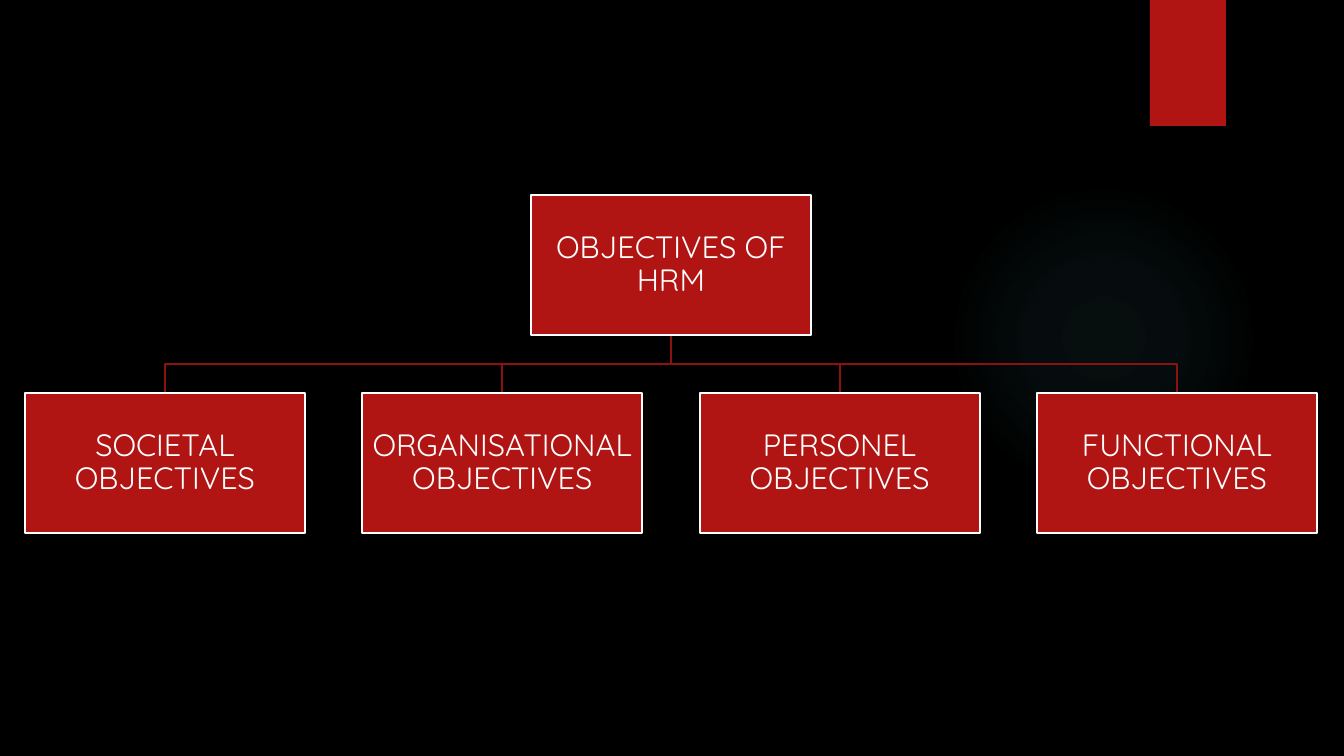
from lxml import etree
from pptx import Presentation
from pptx.dml.color import RGBColor
from pptx.enum.shapes import MSO_SHAPE
from pptx.enum.text import MSO_ANCHOR, PP_ALIGN
from pptx.oxml.ns import qn
from pptx.util import Pt

PX = 12700 * 5 / 7  # EMU in one px
RECT, OVAL = MSO_SHAPE.RECTANGLE, MSO_SHAPE.OVAL
MIDDLE, CENTER = MSO_ANCHOR.MIDDLE, PP_ALIGN.CENTER
BLACK = RGBColor(0, 0, 0)
WHITE = RGBColor(255, 255, 255)
RED = RGBColor(0xB0, 0x15, 0x13)
DARK = RGBColor(0x8D, 0x11, 0x0F)
TEAL = RGBColor(0x50, 0xB9, 0xC1)
GLOW = ((0, 7), (36, 6), (69, 0))  # position and opacity, in percent
CARD_W, CARD_H = 280, 140
ROOT = "OBJECTIVES OF HRM"
GOALS = ("SOCIETAL OBJECTIVES", "ORGANISATIONAL OBJECTIVES",
         "PERSONEL OBJECTIVES", "FUNCTIONAL OBJECTIVES")


def emu(px):
    return round(px * PX)


def add_block(slide, kind, box):
    """Add a plain red shape without line or shadow."""
    shape = slide.shapes.add_shape(kind, *map(emu, box))
    shape.shadow.inherit = False
    shape.fill.solid()
    shape.fill.fore_color.rgb = RED
    shape.line.fill.background()
    return shape


def add_glow(slide, box):
    """Add a circle whose colour fades out from its centre."""
    glow = add_block(slide, OVAL, box)
    fill = glow.fill
    fill.gradient()
    grad = glow._element.spPr.find(qn("a:gradFill"))
    for part in list(grad):
        grad.remove(part)
    stops = etree.SubElement(grad, qn("a:gsLst"))
    for pos, alpha in GLOW:
        stop = etree.SubElement(stops, qn("a:gs"), pos=str(pos * 1000))
        tint = etree.SubElement(stop, qn("a:srgbClr"), val=str(TEAL))
        etree.SubElement(tint, qn("a:alpha"), val=str(alpha * 1000))
    fade = etree.SubElement(grad, qn("a:path"), path="circle")
    etree.SubElement(fade, qn("a:fillToRect"),
                     {side: "50000" for side in "ltrb"})


def add_card(slide, left, top, text):
    card = add_block(slide, RECT, (left, top, CARD_W, CARD_H))
    card.line.color.rgb = WHITE
    card.line.width = Pt(1.5)
    frame = card.text_frame
    form = {"word_wrap": True, "vertical_anchor": MIDDLE}
    form.update({f"margin_{side}": emu(2)
                 for side in ("left", "top", "right", "bottom")})
    for name, value in form.items():
        setattr(frame, name, value)
    para = frame.paragraphs[0]
    para.alignment = CENTER
    para.line_spacing = 0.9
    run = para.add_run()
    run.text = text
    for name, value in {"name": "Quicksand", "size": Pt(22)}.items():
        setattr(run.font, name, value)
    run.font.color.rgb = WHITE


def add_branch(slide, start, end):
    """Draw a line that goes down, across and down again."""
    (x1, y1), (x2, y2) = start, end
    mid = (y1 + y2) / 2
    pen = slide.shapes.build_freeform(x1, y1, scale=PX)
    pen.add_line_segments([(x1, mid), (x2, mid), end], close=False)
    branch = pen.convert_to_shape()
    branch.shadow.inherit = False
    branch.fill.background()
    branch.line.color.rgb = DARK
    branch.line.width = Pt(1.5)


def add_tree(slide, box):
    """Place the root at the top centre and the goals along the bottom."""
    left, top, width, height = box
    mid = left + width / 2
    row = top + height - CARD_H
    step = (width - CARD_W) / (len(GOALS) - 1)
    spots = [left + i * step for i in range(len(GOALS))]
    for spot in spots:
        add_branch(slide, (mid, top + CARD_H), (spot + CARD_W / 2, row))
    add_card(slide, mid - CARD_W / 2, top, ROOT)
    for spot, goal in zip(spots, GOALS):
        add_card(slide, spot, row, goal)


def main():
    deck = Presentation()
    deck.slide_width, deck.slide_height = emu(1344), emu(756)
    slide = deck.slides.add_slide(deck.slide_layouts[6])
    back = slide.background.fill
    back.solid()
    back.fore_color.rgb = BLACK
    add_glow(slide, (949, 184, 310, 310))
    add_block(slide, RECT, (1150, 0, 76, 126))
    add_tree(slide, (25, 195, 1292, 338))
    deck.save("out.pptx")


if __name__ == "__main__":
    main()
